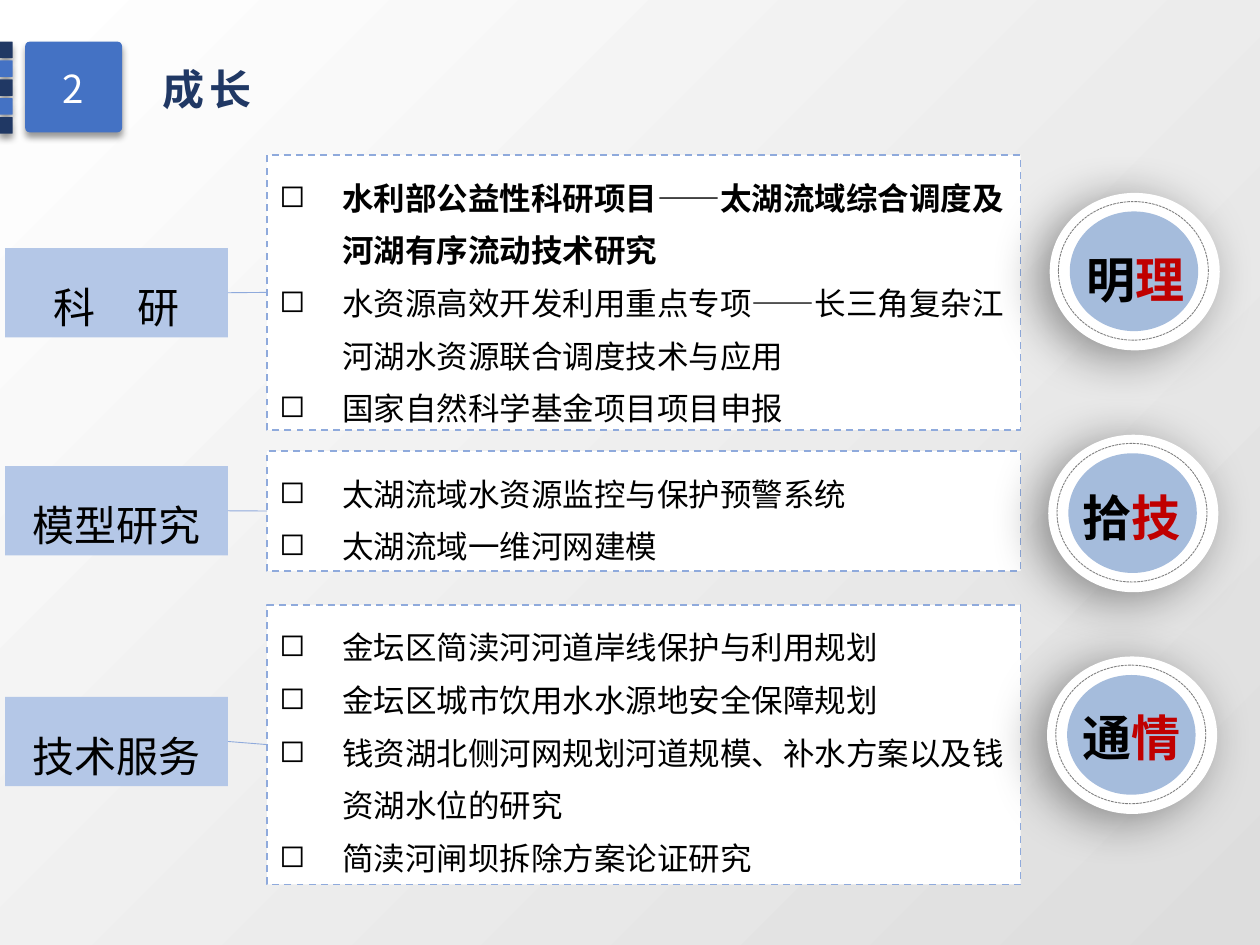
from dataclasses import dataclass

from lxml import etree
from pptx import Presentation
from pptx.dml.color import RGBColor
from pptx.enum import dml, shapes, text
from pptx.oxml.ns import qn
from pptx.slide import Slide
from pptx.util import Pt


def colour(value):
    return RGBColor.from_string(value)


@dataclass
class Page:
    """Draws styled elements on one slide, with lengths in points."""

    slide: Slide
    font: str = "Noto Sans CJK SC"
    blue: str = "4472C4"
    navy: str = "203864"
    edge: str = "8FAADC"
    pale: str = "B4C7E7"
    disc: str = "A5BCDC"
    red: str = "C00000"

    def background(self, start, end):
        fill = self.slide.background.fill
        fill.gradient()
        fill.gradient_angle = 315
        for stop, value, position in zip(fill.gradient_stops, (start, end), (0, 1)):
            stop.color.rgb = colour(value)
            stop.position = position

    def frame(self, shape, margins, anchor=text.MSO_ANCHOR.TOP, wrap=True):
        frame = shape.text_frame
        frame.auto_size = text.MSO_AUTO_SIZE.NONE
        frame.word_wrap = wrap
        frame.vertical_anchor = anchor
        horizontal, vertical = margins
        frame.margin_left = frame.margin_right = Pt(horizontal)
        frame.margin_top = frame.margin_bottom = Pt(vertical)
        return frame

    def style(self, paragraph, size, value="000000", bold=False, spacing=None,
              align=text.PP_ALIGN.CENTER, tracking=0):
        paragraph.alignment = align
        paragraph.line_spacing = Pt(spacing or size * 1.25)
        font = paragraph.font
        font.name, font.size, font.bold = self.font, Pt(size), bold
        font.color.rgb = colour(value)
        properties = paragraph._p.pPr.find(qn("a:defRPr"))
        etree.SubElement(properties, qn("a:ea"), typeface=self.font)
        if tracking:
            properties.set("spc", str(round(tracking * 100)))

    def shape(self, kind, box, fill=None, line=None, shadow=None):
        shape = self.slide.shapes.add_shape(kind, *map(Pt, box))
        shape.shadow.inherit = False
        if fill:
            shape.fill.solid()
            shape.fill.fore_color.rgb = colour(fill)
        else:
            shape.fill.background()
        if line:
            value, width, dash = line
            shape.line.color.rgb = colour(value)
            shape.line.width = Pt(width)
            shape.line.dash_style = dash
        else:
            shape.line.fill.background()
        if shadow:
            self.shadow(shape, *shadow)
        return shape

    def shadow(self, shape, blur, distance, angle):
        effects = shape._element.spPr.find(qn("a:effectLst"))
        outer = etree.SubElement(
            effects, qn("a:outerShdw"), blurRad=str(Pt(blur)), dist=str(Pt(distance)),
            dir=str(angle * 60000), algn="ctr", rotWithShape="0")
        tint = etree.SubElement(outer, qn("a:srgbClr"), val="000000")
        etree.SubElement(tint, qn("a:alpha"), val="40000")

    def tile(self, box, fill, rotation=0):
        tile = self.shape(shapes.MSO_SHAPE.ROUNDED_RECTANGLE, box, fill, shadow=(4, 3, 90))
        tile.adjustments[0] = 0.05
        tile.rotation = rotation
        return tile

    def title(self, words, box):
        title = self.slide.shapes.title
        title.left, title.top, title.width, title.height = map(Pt, box)
        frame = self.frame(title, (7.2, 3.6), wrap=False)
        frame.text = words
        self.style(frame.paragraphs[0], 24, self.navy, True,
                   align=text.PP_ALIGN.LEFT, tracking=2.7)

    def number(self, words, box):
        frame = self.frame(self.tile(box, self.blue), (7.2, 3.6), text.MSO_ANCHOR.MIDDLE)
        frame.text = words
        self.style(frame.paragraphs[0], 22, "FFFFFF")

    def label(self, words, top):
        label = self.shape(shapes.MSO_SHAPE.RECTANGLE, (2.9, top, 127.4, 51), self.pale)
        frame = self.frame(label, (7.2, 5))
        frame.text = words
        self.style(frame.paragraphs[0], 24, spacing=43)
        return label

    def bullets(self, items, top, height, bold_items):
        panel = self.shape(shapes.MSO_SHAPE.RECTANGLE, (152.6, top, 430.6, height), "FFFFFF",
                           (self.edge, 1, dml.MSO_LINE.DASH))
        frame = self.frame(panel, (7.2, 5))
        frame.text = "\n".join(items)
        for index, paragraph in enumerate(frame.paragraphs):
            properties = paragraph._p.get_or_add_pPr()
            properties.set("marL", str(Pt(36)))
            properties.set("indent", str(Pt(-36)))
            etree.SubElement(properties, qn("a:buChar"), char="◻")
            self.style(paragraph, 18, bold=index < bold_items, spacing=30.1,
                       align=text.PP_ALIGN.LEFT)
        return panel

    def link(self, label, panel):
        link = self.slide.shapes.add_connector(shapes.MSO_CONNECTOR.STRAIGHT, 0, 0, 0, 0)
        link.begin_connect(label, 3)
        link.end_connect(panel, 1)
        link.line.color.rgb = colour(self.edge)
        link.line.width = Pt(0.5)
        etree.SubElement(link._element.spPr, qn("a:effectLst"))

    def badge(self, words, left, top, text_left, text_top):
        oval = shapes.MSO_SHAPE.OVAL
        self.shape(oval, (left, top, 97.2, 90), "FFFFFF", shadow=(28, 8, 150))
        self.shape(oval, (left + 11.5, top + 10.6, 73.4, 68.4), self.disc)
        self.shape(oval, (left + 5, top + 5, 85.7, 79.2),
                   line=("808080", 0.5, dml.MSO_LINE.SQUARE_DOT))
        caption = self.slide.shapes.add_textbox(*map(Pt, (text_left, text_top, 112.3, 37.4)))
        paragraph = self.frame(caption, (2.9, 1.4)).paragraphs[0]
        for letter in words:
            run = paragraph.add_run()
            run.text = letter
        self.style(paragraph, 28, bold=True, spacing=36)
        run.font.color.rgb = colour(self.red)


SECTIONS = [
    ("科　研", 141.8, 88.6, 157, 1, [
        "水利部公益性科研项目——太湖流域综合调度及河湖有序流动技术研究",
        "水资源高效开发利用重点专项——长三角复杂江河湖水资源联合调度技术与应用",
        "国家自然科学基金项目项目申报"]),
    ("模型研究", 266.4, 257.8, 68.4, 0, [
        "太湖流域水资源监控与保护预警系统",
        "太湖流域一维河网建模"]),
    ("技术服务", 398.2, 345.6, 159.8, 0, [
        "金坛区简渎河河道岸线保护与利用规划",
        "金坛区城市饮用水水源地安全保障规划",
        "钱资湖北侧河网规划河道规模、补水方案以及钱资湖水位的研究",
        "简渎河闸坝拆除方案论证研究"]),
]
BADGES = [
    ("明理", 599.8, 110.2, 592.6, 139),
    ("拾技", 599, 248.4, 590.4, 275),
    ("通情", 598.3, 375.1, 590.4, 400.3),
]


def main():
    presentation = Presentation()
    presentation.slide_width, presentation.slide_height = Pt(720), Pt(540)
    page = Page(presentation.slides.add_slide(presentation.slide_layouts[5]))
    page.background("FFFFFF", "DDDDDD")
    page.title("成长", (85.7, 31.7, 68.4, 36))
    page.number("2", (14.4, 23.8, 55.4, 51.8))
    for index in range(5):
        fill = page.blue if index % 2 else page.navy
        page.tile((-1.4, 24.5 + 10.8 * index, 9.4, 7.9), fill, 270)
    for name, label_top, top, height, bold_items, items in SECTIONS:
        panel = page.bullets(items, top, height, bold_items)
        page.link(page.label(name, label_top), panel)
    for badge in BADGES:
        page.badge(*badge)
    presentation.save("out.pptx")


if __name__ == "__main__":
    main()
